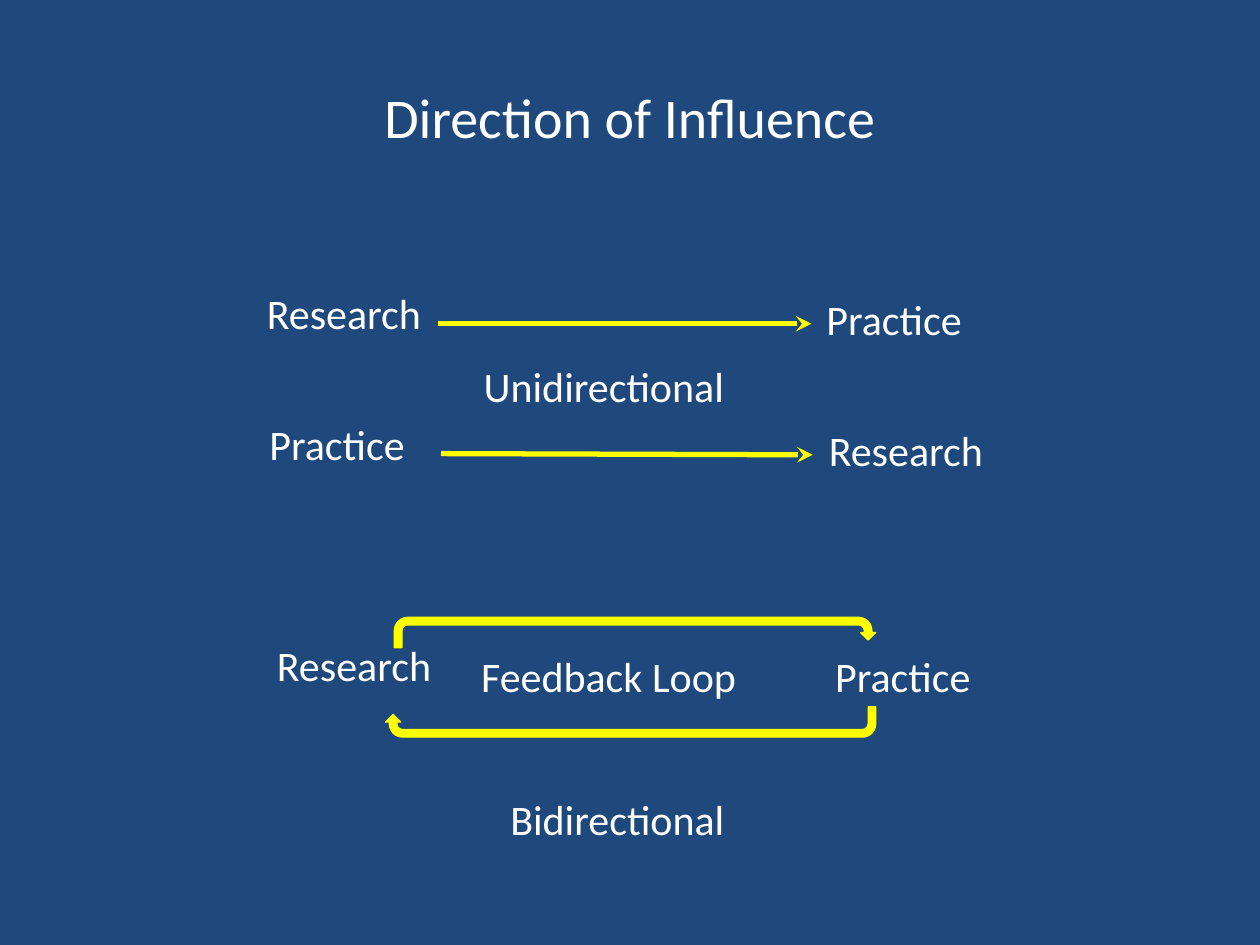
from pptx import Presentation
from pptx.dml.color import RGBColor
from pptx.enum.shapes import MSO_CONNECTOR as Connector, MSO_SHAPE as Shape
from pptx.enum.text import MSO_ANCHOR as Anchor, PP_ALIGN as Align
from pptx.oxml.ns import qn
from pptx.util import Inches, Pt
from lxml.etree import SubElement

NAVY, WHITE, YELLOW = "1F497D", "FFFFFF", "FFFF00"
FONT = "Calibri"

# Content: labels are (text, left, top, width), arrows are (x1, y1, x2, y2)
TITLE = "Direction of Influence"
ONE_WAY = [
    (("Research", 2.02, 2.23, 1.46), (3.48, 2.57, 6.44, 2.57), ("Practice", 6.46, 2.28, 1.29)),
    (("Practice", 2.04, 3.27, 1.46), (3.5, 3.6, 6.45, 3.61), ("Research", 6.48, 3.32, 1.44)),
]
LOOP_LABELS = [("Research", 2.1, 5.03, 1.44), ("Practice", 6.53, 5.11, 1.29)]
LOOP_ARROWS = [(3.13, 4.9, 3.82, 0), (3.06, 5.61, 3.89, 180)]  # left, top, width, rotation
CAPTIONS = [
    ("Unidirectional", 3.74, 2.81, 3, Align.LEFT),
    ("Feedback Loop", 3.72, 5.11, 2.25, Align.LEFT),
    ("Bidirectional", 3.06, 6.25, 3.68, Align.CENTER),
]
LABEL_HEIGHT, LOOP_HEIGHT = 0.51, 0.24
LOOP_ADJUSTMENTS = (0.25, 0.25, 0.25, 0.438, 0.75)


def color(hex_value):
    return RGBColor.from_string(hex_value)


def write(frame, text, size, align):
    paragraph = frame.paragraphs[0]
    paragraph.alignment = align
    run = paragraph.add_run()
    run.text = text
    run.font.name = FONT
    run.font.size = Pt(size)
    run.font.color.rgb = color(WHITE)


def add_label(shapes, text, left, top, width, align=Align.LEFT):
    box = shapes.add_textbox(Inches(left), Inches(top), Inches(width), Inches(LABEL_HEIGHT))
    box.text_frame.word_wrap = True
    write(box.text_frame, text, 24, align)


def add_arrow(shapes, *ends):
    arrow = shapes.add_connector(Connector.STRAIGHT, *map(Inches, ends))
    arrow.line.color.rgb = color(YELLOW)
    arrow.line.width = Pt(3)
    SubElement(arrow.line._get_or_add_ln(), qn("a:tailEnd"), type="stealth")
    SubElement(arrow._element.spPr, qn("a:effectLst"))


def add_loop_arrow(shapes, left, top, width, rotation):
    arrow = shapes.add_shape(Shape.U_TURN_ARROW, Inches(left), Inches(top),
                             Inches(width), Inches(LOOP_HEIGHT))
    for index, value in enumerate(LOOP_ADJUSTMENTS):
        arrow.adjustments[index] = value
    arrow.rotation = rotation
    arrow.shadow.inherit = False
    arrow.fill.solid()
    arrow.fill.fore_color.rgb = color(YELLOW)
    arrow.line.color.rgb = color(YELLOW)
    arrow.line.width = Pt(0.75)


presentation = Presentation()
presentation.slide_width, presentation.slide_height = Inches(10), Inches(7.5)
slide = presentation.slides.add_slide(presentation.slide_layouts[5])
slide.background.fill.solid()
slide.background.fill.fore_color.rgb = color(NAVY)

# Title
title = slide.shapes.title
title.left, title.top, title.width, title.height = map(Inches, (0.5, 0.3, 9, 1.25))
title.text_frame.vertical_anchor = Anchor.MIDDLE
write(title.text_frame, TITLE, 32, Align.CENTER)

# One-way influences
for source, ends, target in ONE_WAY:
    group = slide.shapes.add_group_shape()
    add_label(group.shapes, *source)
    add_arrow(group.shapes, *ends)
    add_label(group.shapes, *target)

# Feedback loop
loop = slide.shapes.add_group_shape()
for label in LOOP_LABELS:
    add_label(loop.shapes, *label)
for loop_arrow in LOOP_ARROWS:
    add_loop_arrow(loop.shapes, *loop_arrow)

# Captions
for caption in CAPTIONS:
    add_label(slide.shapes, *caption)

presentation.save("out.pptx")
